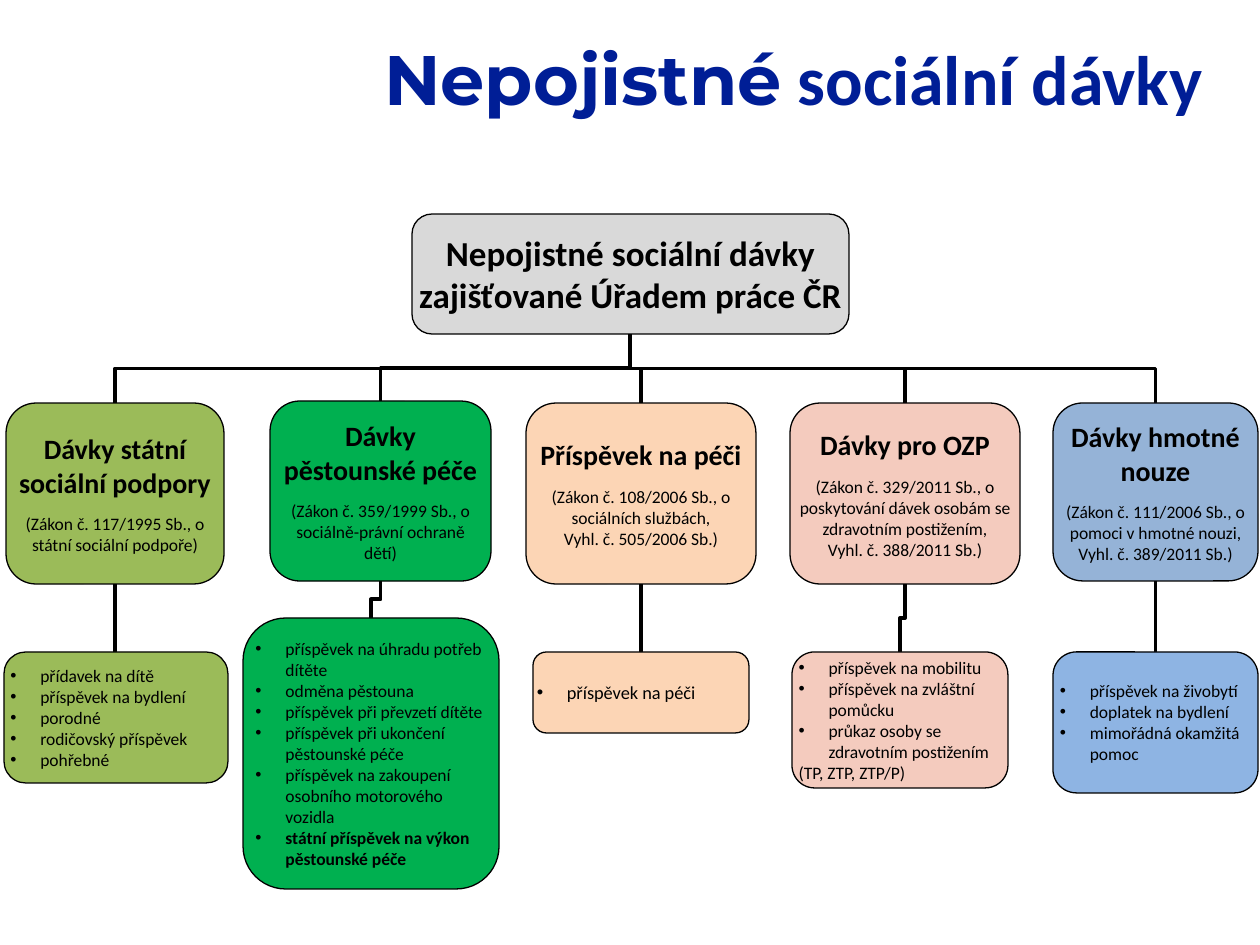
"""Build the slide with the chart of non-insurance social benefits."""
from collections import namedtuple
from dataclasses import dataclass

from lxml import etree
from pptx import Presentation
from pptx import util as u
from pptx.dml.color import RGBColor
from pptx.enum import shapes, text
from pptx.oxml.ns import qn

PX = 914400 / 126
Box = namedtuple("Box", "x y w h")


@dataclass(frozen=True)
class Theme:
    """Colours, fonts, type sizes and line widths."""
    title: str = "001E96"
    ink: str = "000000"
    hub: str = "D9D9D9"
    olive: str = "9BBB59"
    green: str = "00B050"
    peach: str = "FCD5B5"
    pink: str = "F4CBBE"
    steel: str = "95B3D7"
    sky: str = "8EB4E3"
    body_font: str = "Calibri"
    title_font: str = "Montserrat"
    title_size: float = 40
    hub_size: float = 20
    head_size: float = 16
    body_size: float = 10
    law_gap: float = 8.4
    outline: float = 0.75
    link: float = 2.25


T = Theme()
Branch = namedtuple("Branch", "head fill name laws list_box list_fill items extra",
                    defaults=({},))

HUB = Box(412, 214, 437, 120)
BRANCHES = [
    Branch(Box(6, 403, 218, 181), T.olive, "Dávky státní sociální podpory",
           ["(Zákon č. 117/1995 Sb., o státní sociální podpoře)"],
           Box(4, 652, 224, 131), T.olive,
           ["přídavek na dítě", "příspěvek na bydlení", "porodné",
            "rodičovský příspěvek", "pohřebné"]),
    Branch(Box(270, 401, 221, 180), T.green, "Dávky pěstounské péče",
           ["(Zákon č. 359/1999 Sb., o sociálně-právní ochraně dětí)"],
           Box(243, 618, 256, 271), T.green,
           ["příspěvek na úhradu potřeb dítěte", "odměna pěstouna",
            "příspěvek při převzetí dítěte",
            "příspěvek při ukončení pěstounské péče",
            "příspěvek na zakoupení osobního motorového vozidla",
            "státní příspěvek na výkon pěstounské péče"],
           {5: {"bold": True}}),
    Branch(Box(526, 403, 230, 181), T.peach, "Příspěvek na péči",
           ["(Zákon č. 108/2006 Sb., o sociálních službách,",
            "Vyhl. č. 505/2006 Sb.)"],
           Box(533, 652, 216, 81), T.peach,
           ["příspěvek na péči"], {0: {"size": 10.5}}),
    Branch(Box(790, 403, 230, 181), T.pink, "Dávky pro OZP",
           ["(Zákon č. 329/2011 Sb., o poskytování dávek osobám se "
            "zdravotním postižením,", "Vyhl. č. 388/2011 Sb.)"],
           Box(792, 652, 216, 136), T.pink,
           ["příspěvek na mobilitu", "příspěvek na zvláštní pomůcku",
            "průkaz osoby se zdravotním postižením", "(TP, ZTP, ZTP/P)"],
           {3: {"bullet": False}}),
    Branch(Box(1053, 403, 205, 178), T.steel, "Dávky hmotné nouze",
           ["(Zákon č. 111/2006 Sb., o pomoci v hmotné nouzi,",
            "Vyhl. č. 389/2011 Sb.)"],
           Box(1053, 652, 205, 141), T.sky,
           ["příspěvek na živobytí", "doplatek na bydlení",
            "mimořádná okamžitá pomoc"]),
]


def px(n):
    """Turn pixels into EMU."""
    return u.Emu(round(n * PX))


def rgb(colour):
    """Turn a hex string into a colour."""
    return RGBColor.from_string(colour)


def add_run(p, words, size=T.body_size, bold=False, font=T.body_font, colour=T.ink):
    """Add a formatted run to a paragraph."""
    r = p.add_run()
    r.text = words
    r.font.name, r.font.size, r.font.bold = font, u.Pt(size), bold
    r.font.color.rgb = rgb(colour)


def add_text(tf, words, align=text.PP_ALIGN.CENTER, before=0, bullet=False, **style):
    """Add a paragraph of text, using the empty first one if there is one."""
    p = tf.paragraphs[0]
    if p.runs:
        p = tf.add_paragraph()
    p.alignment = align
    if before:
        p.space_before = u.Pt(before)
    if bullet:
        pPr = p._p.get_or_add_pPr()
        pPr.set("marL", str(px(30)))
        pPr.set("indent", str(-px(30)))
        etree.SubElement(pPr, qn("a:buFont")).set("typeface", "Arial")
        etree.SubElement(pPr, qn("a:buChar")).set("char", "•")
    add_run(p, words, **style)


def add_box(s, box, fill):
    """Add a rounded box and return its text frame."""
    sp = s.shapes.add_shape(shapes.MSO_SHAPE.ROUNDED_RECTANGLE, *map(px, box))
    sp.shadow.inherit = False
    sp.fill.solid()
    sp.fill.fore_color.rgb = rgb(fill)
    sp.line.color.rgb = rgb(T.ink)
    sp.line.width = u.Pt(T.outline)
    tf = sp.text_frame
    tf.word_wrap = True
    tf.vertical_anchor = text.MSO_ANCHOR.MIDDLE
    tf.margin_left = tf.margin_right = tf.margin_top = tf.margin_bottom = 0
    return tf


def add_link(s, upper, lower):
    """Link the bottom of one box to the top of another."""
    x1, y1 = upper.x + upper.w / 2, upper.y + upper.h
    x2, y2 = lower.x + lower.w / 2, lower.y
    dx, dy = x2 - x1, y2 - y1
    if abs(dx) < 3:
        kind, ends, turn = shapes.MSO_CONNECTOR.STRAIGHT, (x1, y1, x1, y2), 0
    else:
        cx, cy = (x1 + x2) / 2, (y1 + y2) / 2
        ends = (cx - dy / 2, cy + dx / 2, cx + dy / 2, cy - dx / 2)
        kind, turn = shapes.MSO_CONNECTOR.ELBOW, 90
    c = s.shapes.add_connector(kind, *map(px, ends))
    if turn:
        c._element.spPr.find(qn("a:xfrm")).set("rot", str(turn * 60000))
    c.line.color.rgb = rgb(T.ink)
    c.line.width = u.Pt(T.link)
    etree.SubElement(c._element.spPr, qn("a:effectLst"))


def add_title(s):
    """Add the right-aligned title in two fonts."""
    tf = s.shapes.add_textbox(*map(px, (302, 29, 913, 100))).text_frame
    tf.word_wrap = True
    style = {"size": T.title_size, "bold": True, "colour": T.title}
    add_text(tf, "Nepojistné", align=text.PP_ALIGN.RIGHT, font=T.title_font, **style)
    add_run(tf.paragraphs[0], " sociální dávky", **style)


def add_branch(s, branch):
    """Add the heading box and the list box of one branch."""
    tf = add_box(s, branch.head, branch.fill)
    add_text(tf, branch.name, size=T.head_size, bold=True)
    for i, law in enumerate(branch.laws):
        add_text(tf, law, before=0 if i else T.law_gap)
    tf = add_box(s, branch.list_box, branch.list_fill)
    for i, item in enumerate(branch.items):
        style = {"bullet": True, **branch.extra.get(i, {})}
        add_text(tf, item, align=text.PP_ALIGN.LEFT, **style)


def main():
    """Build and save the slide."""
    prs = Presentation()
    prs.slide_width, prs.slide_height = px(1260), px(945)
    s = prs.slides.add_slide(prs.slide_layouts[6])
    add_title(s)
    for branch in BRANCHES:
        add_link(s, HUB, branch.head)
        add_link(s, branch.head, branch.list_box)
    tf = add_box(s, HUB, T.hub)
    add_text(tf, "Nepojistné sociální dávky zajišťované Úřadem práce ČR",
             size=T.hub_size, bold=True)
    for branch in BRANCHES:
        add_branch(s, branch)
    prs.save("out.pptx")


if __name__ == "__main__":
    main()
